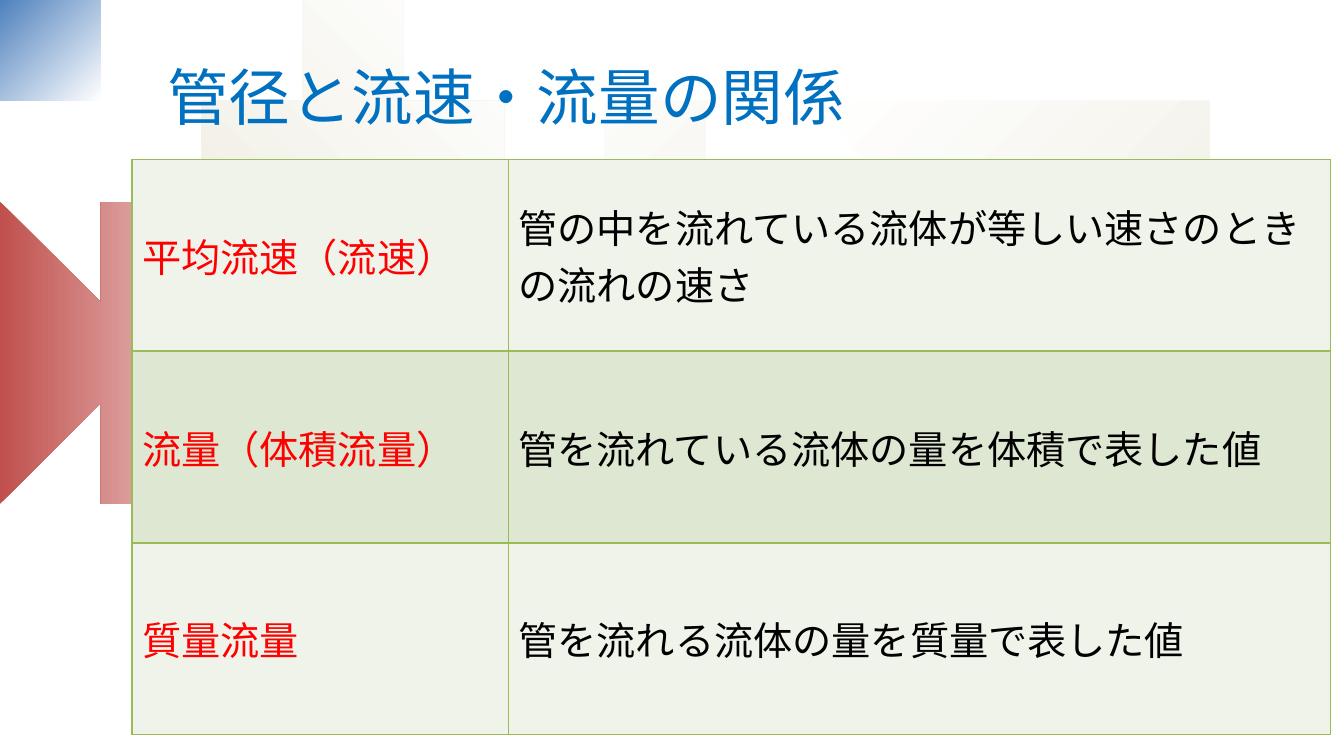
"""Build the slide on pipe diameter, flow velocity and flow rate."""
import copy

import pptx
import pptx.dml.color
import pptx.enum.text
import pptx.oxml
import pptx.oxml.ns
import pptx.util

SLIDE_WIDTH, SLIDE_HEIGHT = 13.33, 7.5
RED, CREAM, WHITE = "C0504D", "EEECE1", "FFFFFF"

TOOTH_SPAN, GEAR_ASPECT = 535, 0.75
GEAR_OUTLINE = [
    (340, 67), (298, 59), (292, 0), (240, 3), (236, 59), (201, 68),
    (151, 20), (116, 35), (149, 88), (126, 106), (50, 85), (33, 107),
    (91, 145), (81, 174), (2, 178), (0, 210), (81, 219), (89, 246),
    (29, 287), (50, 312), (118, 288), (143, 307), (108, 355), (141, 375),
    (201, 332), (236, 341), (244, 400), (296, 401), (302, 339), (346, 330),
    (398, 374), (433, 358), (398, 306), (422, 284), (491, 309), (512, 281),
    (449, 246), (456, 216), (535, 210), (534, 180), (454, 171), (447, 148),
    (510, 114), (489, 87), (418, 109), (394, 91), (431, 41), (396, 25),
]

GEARS = [
    {"place": (-0.66, 2.01, 3.95), "colors": [RED, WHITE], "angle": 0},
    {"place": (0.16, -0.03, 1.22), "colors": ["4F81BD", WHITE], "angle": 45},
    {"place": (1.74, 0.39, 3.31), "colors": [CREAM, WHITE], "angle": 315},
    {"place": (3.69, 1.39, 5.35), "colors": [WHITE, CREAM], "angle": 45},
    {"place": (0, 5.25, 4.99), "colors": [WHITE], "alpha": 50},
    {"place": (6.55, 4.84, 3.3), "colors": [CREAM, WHITE], "angle": 45},
    {"place": (8.23, 0.53, 4.27), "colors": [WHITE, CREAM], "angle": 45},
    {"place": (10.42, 2.8, 5.83), "colors": [WHITE, "99ACC3", "B5CCE8"], "angle": 0},
]

DEFINITIONS = [
    ("平均流速（流速）", "管の中を流れている流体が等しい速さのときの流れの速さ"),
    ("流量（体積流量）", "管を流れている流体の量を体積で表した値"),
    ("質量流量", "管を流れる流体の量を質量で表した値"),
]
COLUMN_SHARES = (0.314, 0.686)
ROW_FILLS = ("EFF3EA", "DEE7D1")
TITLE_FORMAT = {"name": "Arial", "size": pptx.util.Pt(44)}
CELL_FORMAT = {"name": "Noto Sans CJK JP", "size": pptx.util.Pt(28)}


def rgb(code):
    """Turn a hex string into a colour."""
    return pptx.dml.color.RGBColor.from_string(code)


def element(tag, **attributes):
    """Make an empty drawing element."""
    node = pptx.oxml.parse_xml(f"<a:{tag} {pptx.oxml.ns.nsdecls('a')}/>")
    for key, value in attributes.items():
        node.set(key, str(value))
    return node


def write(frame, wording, formats, color):
    """Put one formatted run into a text frame."""
    run = frame.paragraphs[0].add_run()
    run.text = wording
    for key, value in formats.items():
        setattr(run.font, key, value)
    run.font.color.rgb = rgb(color)
    run._r.get_or_add_rPr().append(element("ea", typeface=formats["name"]))


def clip(points, axis, limit, sign):
    """Keep the part of an outline on one side of a slide edge."""
    kept = []
    for start, end in zip(points[-1:] + points[:-1], points):
        start_inside = sign * (start[axis] - limit) >= 0
        end_inside = sign * (end[axis] - limit) >= 0
        if start_inside != end_inside:
            share = (limit - start[axis]) / (end[axis] - start[axis])
            kept.append(tuple(a + share * (b - a) for a, b in zip(start, end)))
        if end_inside:
            kept.append(end)
    return kept


def paint_gear(gear, colors, angle=0, alpha=100):
    """Fill a gear with one translucent colour or with an even gradient."""
    if len(colors) == 1:
        gear.fill.solid()
        gear.fill.fore_color.rgb = rgb(colors[0])
        tint = gear._element.spPr.find(".//" + pptx.oxml.ns.qn("a:srgbClr"))
        tint.append(element("alpha", val=alpha * 1000))
        return
    gear.fill.gradient()
    gear.fill.gradient_angle = (360 - angle) % 360
    stop_list = gear._element.spPr.find(".//" + pptx.oxml.ns.qn("a:gsLst"))
    for _ in colors[2:]:
        stop_list.append(copy.deepcopy(stop_list[0]))
    for index, (stop, color) in enumerate(zip(gear.fill.gradient_stops, colors)):
        stop.position = index / (len(colors) - 1)
        stop.color.rgb = rgb(color)


def add_gear(slide, place, **paint):
    """Draw a gear in its box, cut off at the slide edges."""
    left, top, width = place
    height = width * GEAR_ASPECT
    points = [(left + x / TOOTH_SPAN * width, top + y / (TOOTH_SPAN * GEAR_ASPECT) * height)
              for x, y in GEAR_OUTLINE]
    for axis, limit in enumerate((SLIDE_WIDTH, SLIDE_HEIGHT)):
        points = clip(clip(points, axis, 0, 1), axis, limit, -1)
    builder = slide.shapes.build_freeform(*points[0], scale=pptx.util.Inches(1))
    builder.add_line_segments(points[1:], close=True)
    gear = builder.convert_to_shape()
    gear.shadow.inherit = False
    gear.line.fill.background()
    paint_gear(gear, **paint)


def add_title(slide, box):
    """Place the heading in its box."""
    frame = slide.shapes.add_textbox(*map(pptx.util.Inches, box)).text_frame
    frame.word_wrap = True
    frame.vertical_anchor = pptx.enum.text.MSO_ANCHOR.MIDDLE
    write(frame, "管径と流速・流量の関係", TITLE_FORMAT, "0070C0")


def add_borders(cell):
    """Draw a green line on each side of a cell."""
    properties = cell._tc.get_or_add_tcPr()
    for position, side in enumerate(("lnL", "lnR", "lnT", "lnB")):
        border = element(side, w=pptx.util.Pt(1))
        fill = element("solidFill")
        fill.append(element("srgbClr", val="9BBB59"))
        border.append(fill)
        properties.insert(position, border)


def add_definitions(slide, box):
    """Place the table of terms and meanings in its box."""
    table = slide.shapes.add_table(
        len(DEFINITIONS), len(COLUMN_SHARES), *map(pptx.util.Inches, box)).table
    table.first_row = table.horz_banding = False
    for column, share in zip(table.columns, COLUMN_SHARES):
        column.width = pptx.util.Inches(box[2] * share)
    for row, definition in enumerate(DEFINITIONS):
        for column, (wording, color) in enumerate(zip(definition, ("FF0000", "000000"))):
            cell = table.cell(row, column)
            cell.fill.solid()
            cell.fill.fore_color.rgb = rgb(ROW_FILLS[row % 2])
            cell.vertical_anchor = pptx.enum.text.MSO_ANCHOR.MIDDLE
            write(cell.text_frame, wording, CELL_FORMAT, color)
            add_borders(cell)


def main():
    """Build and save the slide."""
    deck = pptx.Presentation()
    deck.slide_width = pptx.util.Inches(SLIDE_WIDTH)
    deck.slide_height = pptx.util.Inches(SLIDE_HEIGHT)
    slide = deck.slides.add_slide(deck.slide_layouts[6])
    for gear in GEARS:
        add_gear(slide, **gear)
    add_title(slide, (1.56, 0.33, 11.33, 1.25))
    add_definitions(slide, (1.31, 1.58, 11.89, 5.71))
    deck.save("out.pptx")


if __name__ == "__main__":
    main()
